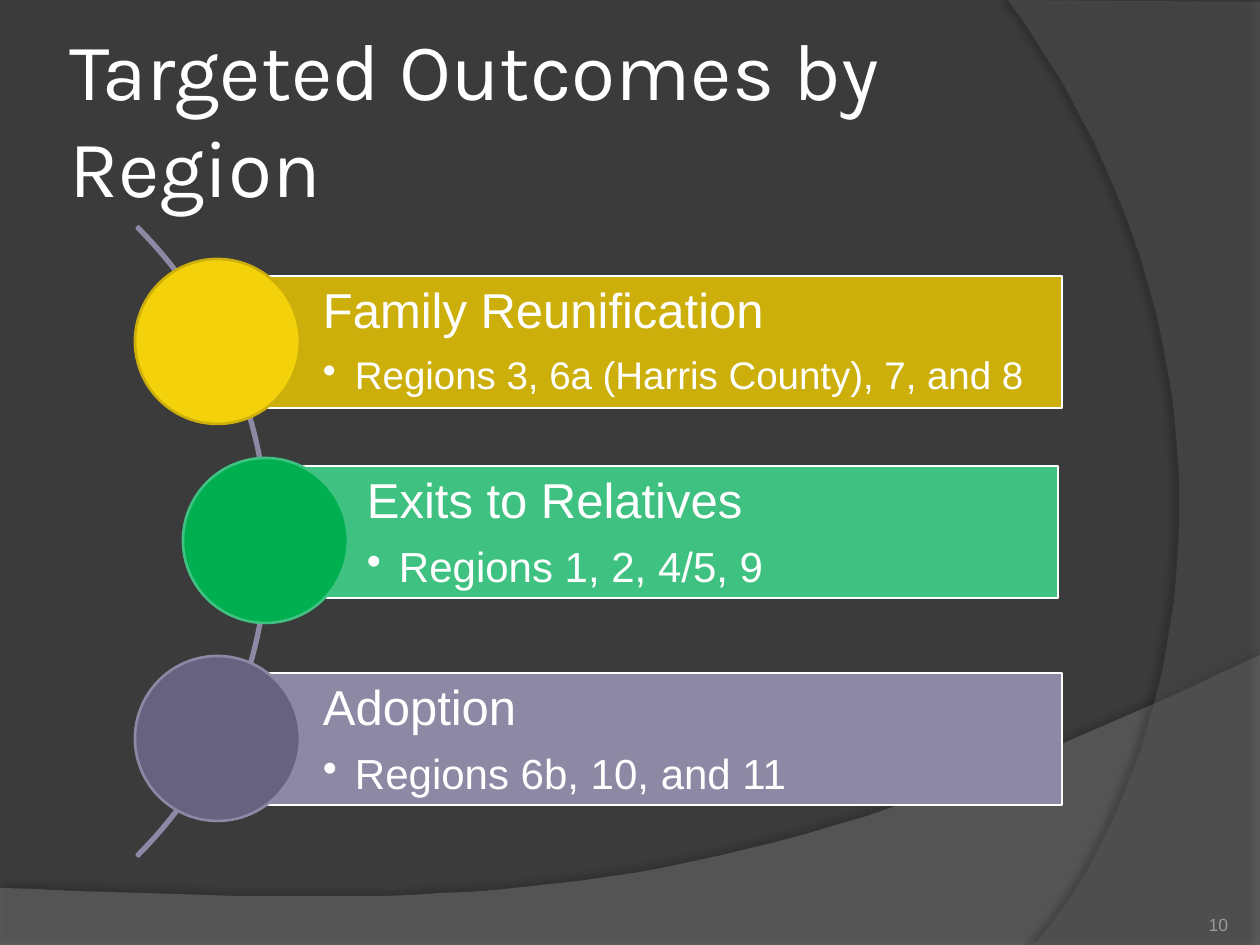
from dataclasses import dataclass

import lxml.etree
import pptx
import pptx.dml.color
import pptx.enum.shapes
import pptx.enum.text
import pptx.oxml.ns
import pptx.util

SCALE = 914400 / 126
SHAPE = pptx.enum.shapes.MSO_SHAPE
ANCHOR = pptx.enum.text.MSO_ANCHOR
ALIGN = pptx.enum.text.PP_ALIGN
Pt = pptx.util.Pt
qn = pptx.oxml.ns.qn


@dataclass(frozen=True)
class Theme:
    back: str = "3B3B3B"
    text: str = "FFFFFF"
    faint: str = "9D9B9A"
    arc: str = "8D89A4"
    head: str = "Karla"
    body: str = "Arial"
    title: int = 46
    name: int = 28
    page: int = 10
    line: float = 1.5


@dataclass(frozen=True)
class Wave:
    start: tuple
    steps: tuple  # each step: one point for a line, three for a curve
    fill: str
    alpha: int
    shade: int
    dist: float
    angle: int


@dataclass(frozen=True)
class Goal:
    name: str
    areas: str
    size: int
    bar: tuple
    dot: tuple
    fill: str
    edge: str


THEME = Theme()
DOT = 165
WAVES = (
    Wave((0, 888), ((0, 945), (1260, 945), (1260, 655), (704, 919, 493, 906, 0, 888)),
         "7F7F7F", 45, 35, 3.5, 270),
    Wave((1260, 2), ((1260, 945), (1034, 945), (1178, 780, 1283, 378, 1008, 0)),
         "5E5E5E", 40, 45, 4, 180),
)
GOALS = (
    Goal("Family Reunification", "Regions 3, 6a (Harris County), 7, and 8", 22,
         (218, 276, 844, 132), (135, 259), "F3D20B", "CCAF0A"),
    Goal("Exits to Relatives", "Regions 1, 2, 4/5, 9", 24,
         (262, 466, 796, 132), (183, 458), "00B050", "3FC281"),
    Goal("Adoption", "Regions 6b, 10, and 11", 24,
         (218, 673, 844, 132), (135, 656), "67627F", "8D89A4"),
)


def px(value: float) -> int:
    return round(value * SCALE)


def box(*values: float) -> list:
    return [px(value) for value in values]


def rgb(code: str):
    return pptx.dml.color.RGBColor.from_string(code)


def paint(shape, fill: str | None, edge: str | None) -> None:
    shape.shadow.inherit = False
    if fill:
        shape.fill.solid()
        shape.fill.fore_color.rgb = rgb(fill)
    else:
        shape.fill.background()
    if edge:
        shape.line.color.rgb = rgb(edge)
        shape.line.width = Pt(THEME.line)
    else:
        shape.line.fill.background()


def style(para, face: str, size: int, color: str, align=ALIGN.LEFT) -> None:
    para.font.name = face
    para.font.size = Pt(size)
    para.font.color.rgb = rgb(color)
    para.alignment = align


def frame(shape, anchor, left: int, rest: int):
    text = shape.text_frame
    text.word_wrap = True
    text.auto_size = pptx.enum.text.MSO_AUTO_SIZE.NONE
    text.vertical_anchor = anchor
    text.margin_left = px(left)
    text.margin_top = text.margin_right = text.margin_bottom = px(rest)
    return text


def curve(start: tuple, bend: tuple, count: int = 40) -> list:
    """Sample points along a cubic curve."""
    a, b, c, d = start, bend[:2], bend[2:4], bend[4:]
    points = []
    for step in range(1, count + 1):
        t = step / count
        u = 1 - t
        points.append(tuple(
            u**3 * a[i] + 3 * u * u * t * b[i] + 3 * u * t * t * c[i] + t**3 * d[i]
            for i in (0, 1)))
    return points


def draw_wave(slide, wave: Wave) -> None:
    points = [wave.start]
    for step in wave.steps:
        points += [step] if len(step) == 2 else curve(points[-1], step)
    pen = slide.shapes.build_freeform(*wave.start, scale=SCALE)
    pen.add_line_segments(points[1:], close=True)
    shape = pen.convert_to_shape()
    paint(shape, wave.fill, None)
    props = shape.element.spPr
    sub = lxml.etree.SubElement
    tint = props.find(qn("a:solidFill")).find(qn("a:srgbClr"))
    sub(tint, qn("a:alpha"), val=str(wave.alpha * 1000))
    glow = sub(props.find(qn("a:effectLst")), qn("a:outerShdw"),
               blurRad=str(Pt(4)), dist=str(Pt(wave.dist)),
               dir=str(wave.angle * 60000), algn="ctr", rotWithShape="0")
    shade = sub(glow, qn("a:srgbClr"), val="000000")
    sub(shade, qn("a:alpha"), val=str(wave.shade * 1000))
    slide.shapes.title.element.addprevious(shape.element)


def draw_title(slide) -> None:
    title = slide.shapes.title
    title.left, title.top, title.width, title.height = box(63, 38, 1029, 158)
    text = frame(title, ANCHOR.MIDDLE, 6, 6)
    text.text = "Targeted Outcomes by Region"
    style(text.paragraphs[0], THEME.head, THEME.title, THEME.text)


def draw_page(slide) -> None:
    shape = slide.shapes.add_textbox(*box(1124, 885, 104, 50))
    text = frame(shape, ANCHOR.BOTTOM, 0, 0)
    text.text = "10"
    style(text.paragraphs[0], THEME.body, THEME.page, THEME.faint, ALIGN.RIGHT)


def draw_arc(slide) -> None:
    arc = slide.shapes.add_shape(SHAPE.BLOCK_ARC, *box(-622, 96, 891, 891))
    for i, value in enumerate((189, 27, 0.003)):
        arc.adjustments[i] = value
    paint(arc, None, THEME.arc)


def draw_goal(slide, goal: Goal) -> None:
    bar = slide.shapes.add_shape(SHAPE.RECTANGLE, *box(*goal.bar))
    paint(bar, goal.edge, THEME.text)
    text = frame(bar, ANCHOR.TOP, 105, 10)
    name, areas = text.paragraphs[0], text.add_paragraph()
    for para, words, size, share in ((name, goal.name, THEME.name, 0.35),
                                     (areas, goal.areas, goal.size, 0.15)):
        para.text = words
        style(para, THEME.body, size, THEME.text)
        para.line_spacing = 0.9
        para.space_after = Pt(round(size * share))
    areas.level = 1
    props = areas.font._element.getparent()
    props.set("marL", str(px(32)))
    props.set("indent", str(px(-32)))
    mark = lxml.etree.Element(qn("a:buChar"), char="•")
    props.find(qn("a:defRPr")).addprevious(mark)

    dot = slide.shapes.add_shape(SHAPE.OVAL, *box(*goal.dot, DOT, DOT))
    paint(dot, goal.fill, goal.edge)


def main() -> None:
    deck = pptx.Presentation()
    deck.slide_width, deck.slide_height = box(1260, 945)
    slide = deck.slides.add_slide(deck.slide_layouts[5])
    slide.background.fill.solid()
    slide.background.fill.fore_color.rgb = rgb(THEME.back)
    for wave in WAVES:
        draw_wave(slide, wave)
    draw_title(slide)
    draw_page(slide)
    draw_arc(slide)
    for goal in GOALS:
        draw_goal(slide, goal)
    deck.save("out.pptx")


if __name__ == "__main__":
    main()
